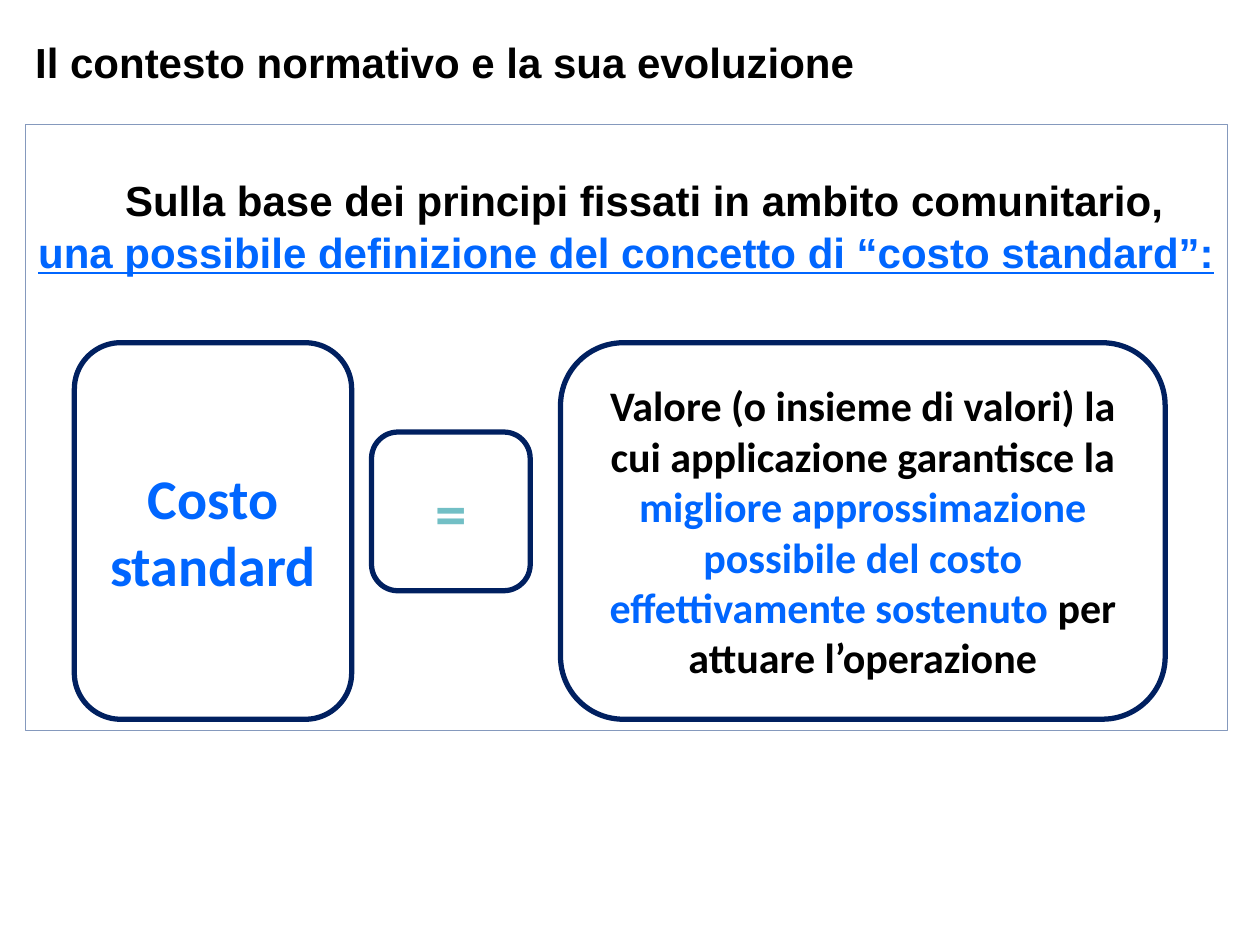
"""Build the slide that defines the standard cost concept."""
from dataclasses import dataclass

from pptx import Presentation
from pptx.dml.color import RGBColor
from pptx.enum.shapes import MSO_SHAPE
from pptx.enum.text import MSO_ANCHOR, MSO_AUTO_SIZE, PP_ALIGN
from pptx.util import Cm, Pt

BLACK = RGBColor(0x00, 0x00, 0x00)
WHITE = RGBColor(0xFF, 0xFF, 0xFF)
BLUE = RGBColor(0x00, 0x66, 0xFF)
NAVY = RGBColor(0x00, 0x20, 0x60)
TEAL = RGBColor(0x72, 0xBF, 0xC5)
FRAME_LINE = RGBColor(0x85, 0x99, 0xBD)
RECTANGLE = MSO_SHAPE.RECTANGLE
ROUNDED = MSO_SHAPE.ROUNDED_RECTANGLE
CENTER, JUSTIFY = PP_ALIGN.CENTER, PP_ALIGN.JUSTIFY
TOP, MIDDLE = MSO_ANCHOR.TOP, MSO_ANCHOR.MIDDLE
NO_AUTOFIT = MSO_AUTO_SIZE.NONE
TITLE_ONLY = 5


@dataclass(frozen=True)
class Span:
    text: str
    color: RGBColor
    underline: bool = False


@dataclass(frozen=True)
class Card:
    left: float
    top: float
    width: float
    height: float
    size: int
    spans: tuple[Span, ...]


STATEMENT = (
    Span("Sulla base dei principi fissati in ambito comunitario,", BLACK),
    Span("una possibile definizione del concetto di “costo standard”:", BLUE, True),
)
CARD_TOP, CARD_HEIGHT = 6.91, 7.59
SIGN_SIDE = 3.2
CARDS = (
    Card(1.5, CARD_TOP, 5.59, CARD_HEIGHT, 32, (Span("Costo standard", BLUE),)),
    Card(11.3, CARD_TOP, 12.19, CARD_HEIGHT, 24, (
        Span("Valore (o insieme di valori) la cui applicazione garantisce la ", BLACK),
        Span("migliore approssimazione possibile del costo effettivamente sostenuto ", BLUE),
        Span("per attuare l’operazione", BLACK),
    )),
    Card(7.49, 8.71, SIGN_SIDE, SIGN_SIDE, 36, (Span("=", TEAL),)),
)


def write_spans(paragraph, spans: tuple[Span, ...], font_name: str, size: int) -> None:
    """Add bold runs to a paragraph."""
    for span in spans:
        run = paragraph.add_run()
        run.text = span.text
        run.font.name = font_name
        run.font.size = Pt(size)
        run.font.bold = True
        run.font.color.rgb = span.color
        if span.underline:
            run.font.underline = True


def add_box(page, kind, bounds: tuple[float, ...], line_color: RGBColor, line_width: float):
    """Add an outlined, shadowless shape with bounds in centimetres."""
    box = page.shapes.add_shape(kind, *(Cm(length) for length in bounds))
    box.shadow.inherit = False
    box.fill.background()
    box.line.color.rgb = line_color
    box.line.width = Pt(line_width)
    box.text_frame.word_wrap = True
    return box


def add_title(page, text: str) -> None:
    """Place and format the title placeholder."""
    title = page.shapes.title
    title.left, title.top, title.width, title.height = Cm(0.71), Cm(0.69), Cm(22.81), Cm(1.07)
    frame = title.text_frame
    frame.auto_size = NO_AUTOFIT
    frame.vertical_anchor = MIDDLE
    frame.margin_left = frame.margin_right = frame.margin_bottom = 0
    frame.margin_top = Cm(0.03)
    paragraph = frame.paragraphs[0]
    paragraph.alignment = JUSTIFY
    write_spans(paragraph, (Span(text, BLACK),), "Arial", 24)


def add_statement(page) -> None:
    """Add the framed introduction."""
    box = add_box(page, RECTANGLE, (0.51, 2.51, 24.23, 12.22), FRAME_LINE, 0.75)
    box.fill.solid()
    box.fill.fore_color.rgb = WHITE
    frame = box.text_frame
    frame.vertical_anchor = TOP
    frame.margin_top = Cm(1)
    frame.margin_left = frame.margin_right = Cm(0.2)
    frame.text = "\n".join(span.text for span in STATEMENT)
    for paragraph, span in zip(frame.paragraphs, STATEMENT):
        paragraph.text = ""
        paragraph.alignment = CENTER
        write_spans(paragraph, (span,), "Arial", 24)
    first, second = frame.paragraphs
    first._p.get_or_add_pPr().set("marL", str(Cm(0.73)))
    second.space_before = Pt(1)


def add_card(page, card: Card) -> None:
    """Add one rounded card of the equation."""
    bounds = (card.left, card.top, card.width, card.height)
    box = add_box(page, ROUNDED, bounds, NAVY, 3)
    box.text_frame.vertical_anchor = MIDDLE
    paragraph = box.text_frame.paragraphs[0]
    paragraph.alignment = CENTER
    write_spans(paragraph, card.spans, "Calibri", card.size)


def main() -> None:
    """Create the deck and save it."""
    deck = Presentation()
    deck.slide_width, deck.slide_height = Cm(25.4), Cm(19.05)
    page = deck.slides.add_slide(deck.slide_layouts[TITLE_ONLY])
    add_title(page, "Il contesto normativo e la sua evoluzione")
    add_statement(page)
    for card in CARDS:
        add_card(page, card)
    deck.save("out.pptx")


if __name__ == "__main__":
    main()
